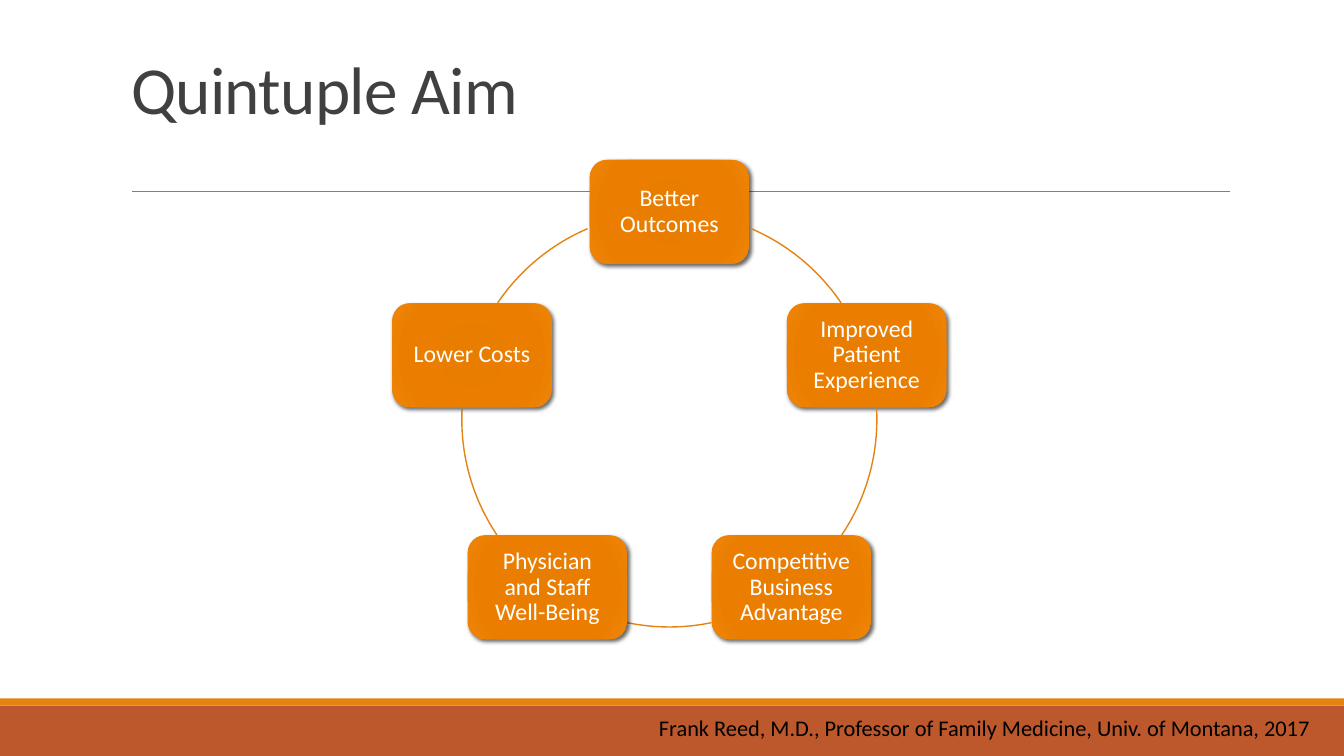
"""Build the Quintuple Aim slide: five goals set around a ring."""
import math
from typing import NamedTuple

import lxml.etree
import pptx
import pptx.dml.color
import pptx.enum.shapes
import pptx.enum.text
import pptx.oxml
import pptx.oxml.ns
import pptx.util

Cm = pptx.util.Cm
Pt = pptx.util.Pt
RGBColor = pptx.dml.color.RGBColor
Shape = pptx.enum.shapes.MSO_SHAPE
Align = pptx.enum.text.PP_ALIGN
Anchor = pptx.enum.text.MSO_ANCHOR

RUST = RGBColor(0xBD, 0x58, 0x2C)
ORANGE = RGBColor(0xE4, 0x83, 0x12)
GREY = RGBColor(0x80, 0x80, 0x80)
DARK = RGBColor(0x40, 0x40, 0x40)
WHITE = RGBColor(0xFF, 0xFF, 0xFF)
BLACK = RGBColor(0x00, 0x00, 0x00)
GLOW = (
    (0, RGBColor(0xE5, 0x7B, 0x00)),
    (34, RGBColor(0xE8, 0x7D, 0x00)),
    (70, RGBColor(0xEB, 0x7E, 0x00)),
    (100, RGBColor(0xEF, 0x84, 0x07)),
)

WIDE, HIGH = 33.87, 19.05
MID_X, MID_Y, RADIUS = 16.87, 10.57, 5.23
BOX_W, BOX_H = 4.02, 2.62


class Band(NamedTuple):
    top: float
    high: float
    color: RGBColor


class Goal(NamedTuple):
    text: str
    start: float
    end: float


BANDS = (Band(17.78, 1.27, RUST), Band(17.6, 0.18, ORANGE))
GOALS = (
    Goal("Better Outcomes", 293.2, 325.8),
    Goal("Improved Patient Experience", 357.2, 33.8),
    Goal("Competitive Business Advantage", 78.3, 101.7),
    Goal("Physician and Staff Well-Being", 146.2, 182.8),
    Goal("Lower Costs", 214.2, 246.8),
)


def style(frame, size: float, color: RGBColor, align, space: float = 1) -> None:
    """Format the only paragraph of a text frame."""
    para = frame.paragraphs[0]
    para.alignment = align
    para.line_spacing = space
    font = para.runs[0].font
    font.name, font.size = "Calibri", Pt(size)
    font.color.rgb = color


def add_xml(shape, body: str) -> None:
    """Append a drawing element to the shape properties."""
    root = f'<a:r {pptx.oxml.ns.nsdecls("a")}>{body}</a:r>'
    shape._element.spPr.append(pptx.oxml.parse_xml(root)[0])


def add_band(slide, band: Band) -> None:
    """Draw a full-width strip at the foot of the slide."""
    strip = slide.shapes.add_shape(
        Shape.RECTANGLE, 0, Cm(band.top), Cm(WIDE), Cm(band.high))
    strip.shadow.inherit = False
    strip.fill.solid()
    strip.fill.fore_color.rgb = band.color
    strip.line.fill.background()


def add_rule(slide) -> None:
    """Draw the thin line under the title."""
    rule = slide.shapes.add_connector(
        pptx.enum.shapes.MSO_CONNECTOR.STRAIGHT,
        Cm(3.33), Cm(4.82), Cm(31), Cm(4.82))
    rule.line.color.rgb, rule.line.width = GREY, Pt(0.5)
    add_xml(rule, "<a:effectLst/>")


def add_title(slide) -> None:
    """Fill and place the title."""
    title = slide.shapes.title
    title.left, title.top = Cm(3.05), Cm(0.79)
    title.width, title.height = Cm(27.94), Cm(2.57)
    frame = title.text_frame
    frame.text = "Quintuple Aim"
    frame.vertical_anchor = Anchor.BOTTOM
    style(frame, 48, DARK, Align.LEFT, 0.85)
    frame.paragraphs[0].runs[0].font._element.set("spc", "-50")


def add_arc(slide, goal: Goal) -> None:
    """Draw the part of the ring that follows a goal."""
    arc = slide.shapes.add_shape(
        Shape.ARC, Cm(MID_X - RADIUS), Cm(MID_Y - RADIUS),
        Cm(2 * RADIUS), Cm(2 * RADIUS))
    arc.shadow.inherit = False
    arc.fill.background()
    arc.line.color.rgb, arc.line.width = ORANGE, Pt(1)
    for i, angle in enumerate((goal.start, goal.end)):
        arc.adjustments[i] = angle * 0.6


def add_box(slide, goal: Goal, turn: float) -> None:
    """Draw a goal box centred on the ring at the given turn from the top."""
    left = MID_X + RADIUS * math.sin(turn) - BOX_W / 2
    top = MID_Y - RADIUS * math.cos(turn) - BOX_H / 2
    box = slide.shapes.add_shape(
        Shape.ROUNDED_RECTANGLE, Cm(left), Cm(top), Cm(BOX_W), Cm(BOX_H))
    stops = "".join(
        f'<a:gs pos="{pos * 1000}"><a:srgbClr val="{color}"/></a:gs>'
        for pos, color in GLOW)
    add_xml(box, f'<a:gradFill rotWithShape="1"><a:gsLst>{stops}</a:gsLst>'
            '<a:path path="circle"><a:fillToRect l="100000" t="100000" '
            'r="100000" b="100000"/></a:path></a:gradFill>')
    box.line.fill.background()
    add_xml(box, f'<a:effectLst><a:outerShdw blurRad="{Pt(3)}" dist="{Pt(2)}" '
            'dir="2700000" rotWithShape="0"><a:srgbClr val="000000">'
            '<a:alpha val="60000"/></a:srgbClr></a:outerShdw></a:effectLst>')
    frame = box.text_frame
    frame.text = goal.text
    frame.word_wrap = True
    frame.vertical_anchor = Anchor.MIDDLE
    frame.margin_left = frame.margin_right = Cm(0.3)
    frame.margin_top = frame.margin_bottom = Cm(0.3)
    style(frame, 17, WHITE, Align.CENTER, 0.9)


def add_credit(slide) -> None:
    """Write the credit line on the lower band."""
    frame = slide.shapes.add_textbox(
        Cm(15.75), Cm(17.86), Cm(18.12), Cm(0.94)).text_frame
    frame.text = ("Frank Reed, M.D., Professor of Family Medicine, "
                  "Univ. of Montana, 2017")
    frame.word_wrap = True
    style(frame, 16, BLACK, Align.CENTER)


def main() -> None:
    """Build and save the slide."""
    deck = pptx.Presentation()
    deck.slide_width, deck.slide_height = Cm(WIDE), Cm(HIGH)
    slide = deck.slides.add_slide(deck.slide_layouts[5])
    for band in BANDS:
        add_band(slide, band)
    add_rule(slide)
    add_title(slide)
    for i, goal in enumerate(GOALS):
        add_box(slide, goal, i * math.tau / len(GOALS))
        add_arc(slide, goal)
    add_credit(slide)
    deck.save("out.pptx")


if __name__ == "__main__":
    main()
